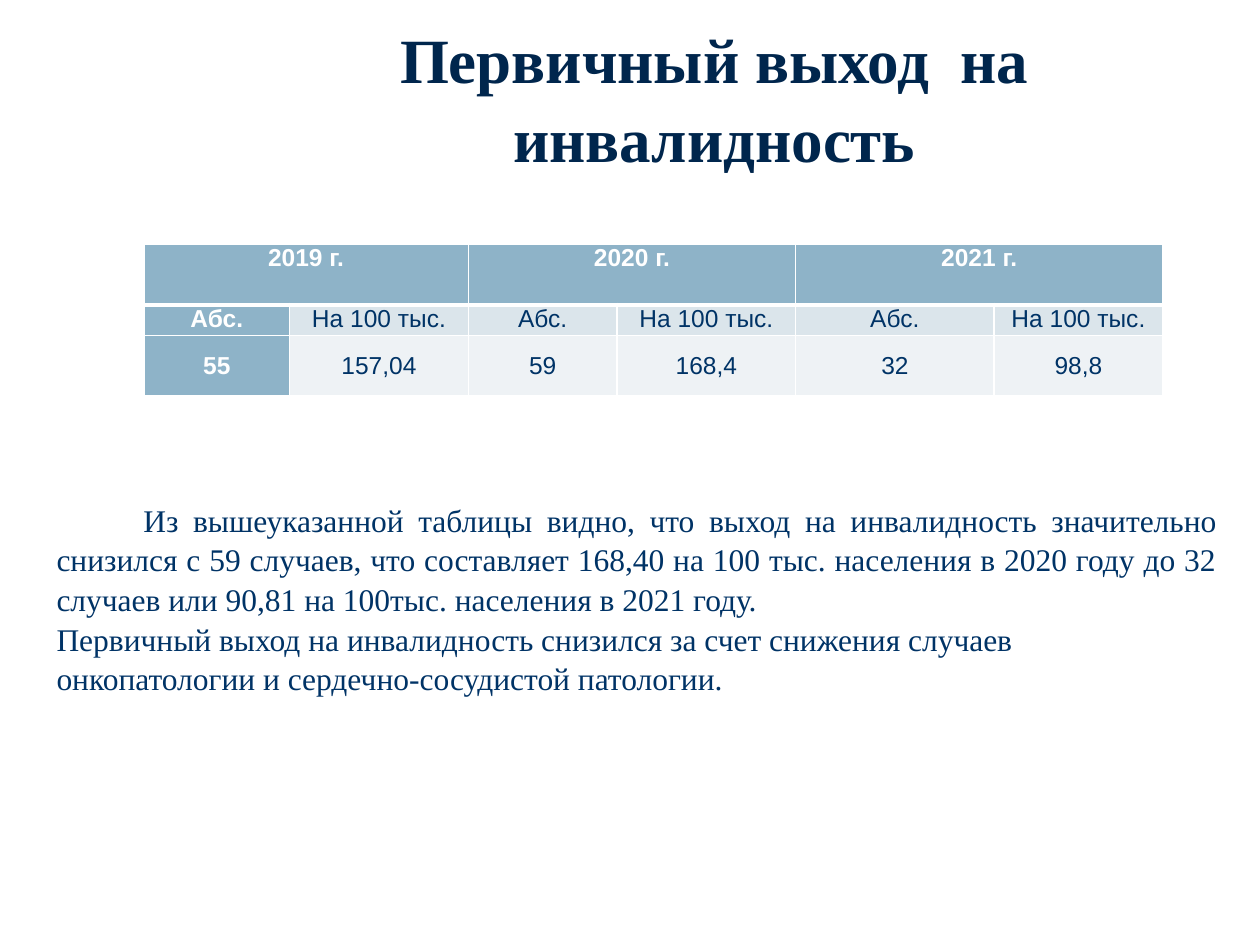
import pptx
import pptx.util
import pptx.dml.color
import pptx.enum.text
import pptx.oxml.ns
import lxml.etree

Cm = pptx.util.Cm
Pt = pptx.util.Pt
ALIGN = pptx.enum.text.PP_ALIGN
ANCHOR = pptx.enum.text.MSO_ANCHOR

COLORS = {
    "title": "00264D",
    "text": "003366",
    "white": "FFFFFF",
    "header": "8EB3C8",
    "band": "DBE5EB",
    "light": "EEF2F5",
}

TITLE = "Первичный выход  на инвалидность"
YEARS = ["2019 г.", "2020 г.", "2021 г."]
MEASURES = ["Абс.", "На 100 тыс."] * len(YEARS)
VALUES = ["55", "157,04", "59", "168,4", "32", "98,8"]
COLUMN_WIDTHS = [2.94, 3.6, 3.0, 3.6, 4.0, 3.4]
ROW_HEIGHTS = [1.22, 0.61, 1.22]
CONCLUSIONS = [
    "Из вышеуказанной таблицы видно, что выход на инвалидность значительно снизился "
    "с 59 случаев, что составляет 168,40 на 100 тыс. населения в 2020 году до 32 "
    "случаев или 90,81 на 100тыс. населения в 2021 году.",
    "Первичный выход на инвалидность снизился за счет снижения случаев "
    "онкопатологии и сердечно-сосудистой патологии.",
]


def color(name):
    return pptx.dml.color.RGBColor.from_string(COLORS[name])


def apply_format(target, values):
    for name, value in values.items():
        setattr(target, name, value)


def write(para, text, tint, font, **layout):
    apply_format(para, layout)
    span = para.add_run()
    span.text = text
    apply_format(span.font, font)
    span.font.color.rgb = color(tint)


def add_text_box(page, box, anchor):
    shape = page.shapes.add_textbox(*map(Cm, box))
    apply_format(shape.text_frame, {"word_wrap": True, "vertical_anchor": anchor})
    return shape.text_frame


def add_title(page, box):
    frame = add_text_box(page, box, ANCHOR.MIDDLE)
    font = {"name": "Times New Roman", "size": Pt(36), "bold": True}
    write(frame.paragraphs[0], TITLE, "title", font,
          alignment=ALIGN.CENTER, line_spacing=1.05)


def add_borders(cell, widths):
    properties = cell._tc.get_or_add_tcPr()
    for side, width in widths.items():
        line = lxml.etree.SubElement(
            properties, pptx.oxml.ns.qn(f"a:ln{side}"), w=str(Pt(width)))
        fill = lxml.etree.SubElement(line, pptx.oxml.ns.qn("a:solidFill"))
        lxml.etree.SubElement(
            fill, pptx.oxml.ns.qn("a:srgbClr"), val=COLORS["white"])


def format_cell(cell, row, column):
    add_borders(cell, {"L": 1, "R": 1,
                       "T": 3 if row == 1 else 1,
                       "B": 3 if row == 0 else 1})
    is_header = row == 0 or column == 0
    cell.fill.solid()
    cell.fill.fore_color.rgb = color("header" if is_header else ("band", "light")[row - 1])
    apply_format(cell, {
        "margin_left": Cm(0.15), "margin_right": Cm(0.15),
        "margin_top": 0, "margin_bottom": 0,
        "vertical_anchor": ANCHOR.MIDDLE if row == 2 else ANCHOR.TOP,
    })
    return is_header


def add_disability_table(page, box):
    header = [text for year in YEARS for text in (year, "")]
    rows = [header, MEASURES, VALUES]
    table = page.shapes.add_table(len(rows), len(MEASURES), *map(Cm, box)).table
    for column, width in zip(table.columns, COLUMN_WIDTHS):
        column.width = Cm(width)
    for row, height in zip(table.rows, ROW_HEIGHTS):
        row.height = Cm(height)
    for column in range(0, len(MEASURES), 2):
        table.cell(0, column).merge(table.cell(0, column + 1))
    for row, texts in enumerate(rows):
        for column, text in enumerate(texts):
            cell = table.cell(row, column)
            is_header = format_cell(cell, row, column)
            para = cell.text_frame.paragraphs[0]
            font = {"name": "Arial", "size": Pt(14), "bold": is_header}
            if text:
                write(para, text, "white" if is_header else "text", font,
                      alignment=ALIGN.CENTER)


def add_conclusions(page, box):
    frame = add_text_box(page, box, ANCHOR.TOP)
    font = {"name": "Times New Roman", "size": Pt(18), "bold": False}
    first, second = frame.paragraphs[0], frame.add_paragraph()
    write(first, CONCLUSIONS[0], "text", font,
          alignment=ALIGN.JUSTIFY, line_spacing=1.05)
    first._p.get_or_add_pPr().set("indent", str(Cm(1.75)))
    write(second, CONCLUSIONS[1], "text", font,
          alignment=ALIGN.LEFT, line_spacing=1.05)


def main():
    deck = pptx.Presentation()
    apply_format(deck, {"slide_width": Cm(25.4), "slide_height": Cm(19.05)})
    page = deck.slides.add_slide(deck.slide_layouts[6])
    add_title(page, (3.7, 0.33, 21.4, 3.2))
    add_disability_table(page, (2.9, 4.93, sum(COLUMN_WIDTHS), sum(ROW_HEIGHTS)))
    add_conclusions(page, (0.89, 9.93, 23.9, 4.11))
    deck.save("out.pptx")


if __name__ == "__main__":
    main()
